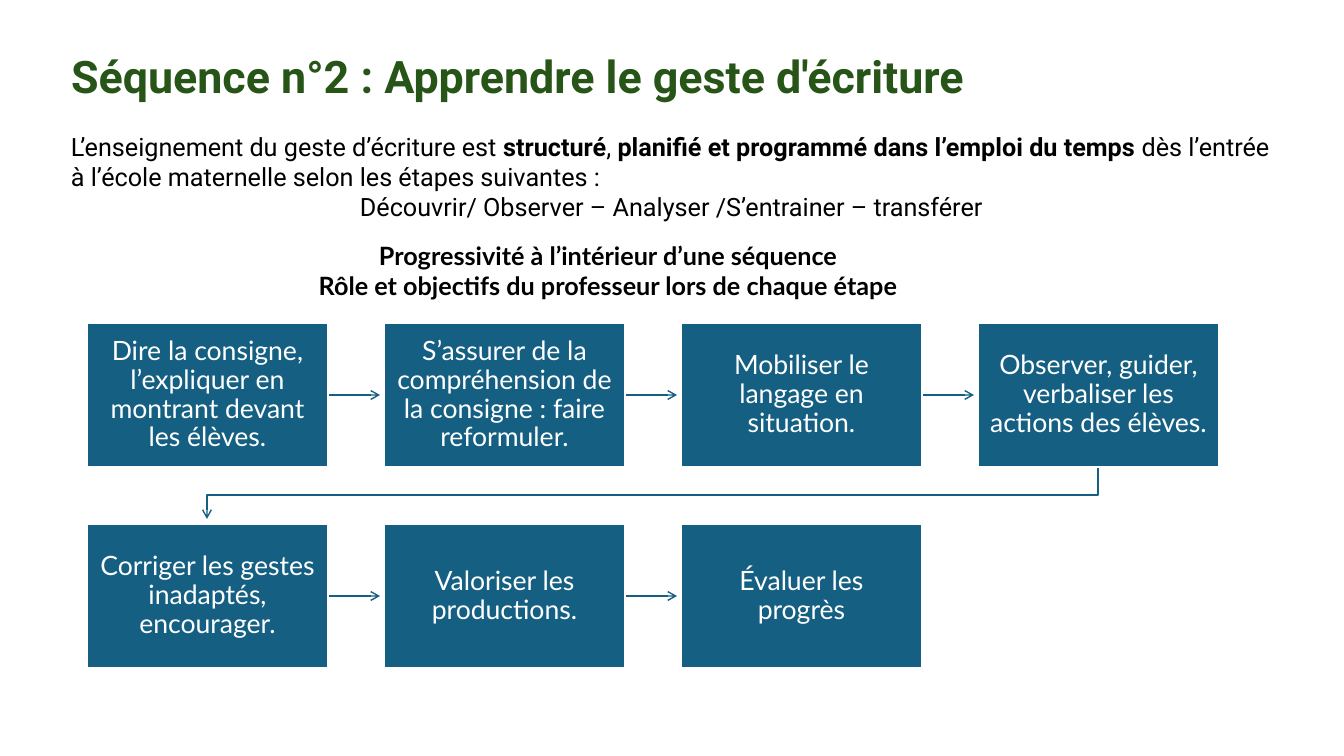
import pptx
import pptx.dml.color
import pptx.enum.shapes
import pptx.enum.text
import pptx.oxml.ns
import pptx.util
from lxml import etree

ALIGN = pptx.enum.text.PP_ALIGN
MIDDLE = pptx.enum.text.MSO_ANCHOR.MIDDLE
GROW = pptx.enum.text.MSO_AUTO_SIZE.SHAPE_TO_FIT_TEXT
BLUE, WHITE, GREEN, BLACK = "156082", "FFFFFF", "275417", "000000"
PX = 914400 / 100.8


def px(*lengths):
    return [pptx.util.Emu(round(length * PX)) for length in lengths]


def paint(target, color, font=None, size=None, bold=None):
    """Colour a fill, a line or a font; for fonts, set the type as well."""
    if hasattr(target, "solid"):
        target.solid()
        target.fore_color.rgb = pptx.dml.color.RGBColor.from_string(color)
    elif font is None:
        paint(target.fill, color)
    else:
        target.color.rgb = pptx.dml.color.RGBColor.from_string(color)
        target.name, target.size, target.bold = font, pptx.util.Pt(size), bold


deck = pptx.Presentation()
deck.slide_width, deck.slide_height = px(1344, 756)
slide = deck.slides.add_slide(deck.slide_layouts[5])
shapes = slide.shapes

# Title
title = shapes.title
title.left, title.top, title.width, title.height = px(61, 31, 1221, 95)
title.text_frame.text = "Séquence n°2 : Apprendre le geste d'écriture"
title.text_frame.vertical_anchor = MIDDLE
heading = title.text_frame.paragraphs[0]
heading.alignment = ALIGN.LEFT
heading.line_spacing = 0.9
paint(heading.runs[0].font, GREEN, "Roboto", 32, True)

# Introduction and heading of the steps: (text, bold) runs in aligned paragraphs
passages = [
    ((61, 126, 1221, 102), "Roboto", [
        (ALIGN.LEFT, [
            ("L’enseignement du geste d’écriture est ", False),
            ("structuré", True),
            (", ", False),
            ("planifié et programmé dans l’emploi du temps ", True),
            ("dès l’entrée à l’école maternelle selon les étapes suivantes :", False),
        ]),
        (ALIGN.CENTER, [("Découvrir/ Observer – Analyser /S’entrainer – transférer", False)]),
    ]),
    ((277, 235, 662, 72), "Lato", [
        (ALIGN.CENTER, [("Progressivité à l’intérieur d’une séquence", True)]),
        (ALIGN.CENTER, [("Rôle et objectifs du professeur lors de chaque étape", True)]),
    ]),
]
for place, font, paragraphs in passages:
    frame = shapes.add_textbox(*px(*place)).text_frame
    frame.word_wrap = True
    frame.auto_size = GROW
    for index, (alignment, pieces) in enumerate(paragraphs):
        paragraph = frame.add_paragraph() if index else frame.paragraphs[0]
        paragraph.alignment = alignment
        for text, bold in pieces:
            run = paragraph.add_run()
            run.text = text
            paint(run.font, BLACK, font, 18, bold)

# Steps, four to a row, each followed by an arrow to the next
steps = [
    "Dire la consigne, l’expliquer en montrant devant les élèves.",
    "S’assurer de la compréhension de la consigne : faire reformuler.",
    "Mobiliser le langage en situation.",
    "Observer, guider, verbaliser les actions des élèves.",
    "Corriger les gestes inadaptés, encourager.",
    "Valoriser les productions.",
    "Évaluer les progrès",
]
COLUMNS = 4
LEFT, TOP, WIDTH, HEIGHT = 87, 323, 241, 144
PITCH_X, PITCH_Y, ARROW = 297, 201, 52

for index, text in enumerate(steps):
    row, column = divmod(index, COLUMNS)
    x, y = LEFT + column * PITCH_X, TOP + row * PITCH_Y

    if index < len(steps) - 1:
        if column < COLUMNS - 1:
            start, middle = x + WIDTH, y + HEIGHT // 2
            arrow = shapes.add_connector(
                pptx.enum.shapes.MSO_CONNECTOR.STRAIGHT,
                *px(start, middle, start + ARROW, middle))
        else:
            # The last step of a row leads back to the first one of the next
            start, end, bottom = x + WIDTH // 2, LEFT + WIDTH // 2, y + HEIGHT
            outline = shapes.build_freeform(start, bottom, scale=PX)
            outline.add_line_segments(
                [(start, bottom + 28), (end, bottom + 28), (end, bottom + ARROW)],
                close=False)
            arrow = outline.convert_to_shape()
            arrow.fill.background()
        paint(arrow.line, BLUE)
        arrow.line.width = pptx.util.Pt(1)
        etree.SubElement(arrow.line._get_or_add_ln(),
                         pptx.oxml.ns.qn("a:tailEnd"), type="arrow")
        etree.SubElement(arrow._element.spPr, pptx.oxml.ns.qn("a:effectLst"))

    step = shapes.add_shape(pptx.enum.shapes.MSO_SHAPE.RECTANGLE,
                            *px(x, y, WIDTH, HEIGHT))
    step.shadow.inherit = False
    paint(step.fill, BLUE)
    paint(step.line, WHITE)
    step.line.width = pptx.util.Pt(1.5)
    frame = step.text_frame
    frame.text = text
    frame.word_wrap = True
    frame.vertical_anchor = MIDDLE
    frame.margin_left, frame.margin_top, frame.margin_right, frame.margin_bottom = px(12, 12, 12, 12)
    paragraph = frame.paragraphs[0]
    paragraph.alignment = ALIGN.CENTER
    paragraph.line_spacing = 0.9
    paint(paragraph.runs[0].font, WHITE, "Lato", 19, False)

deck.save("out.pptx")
